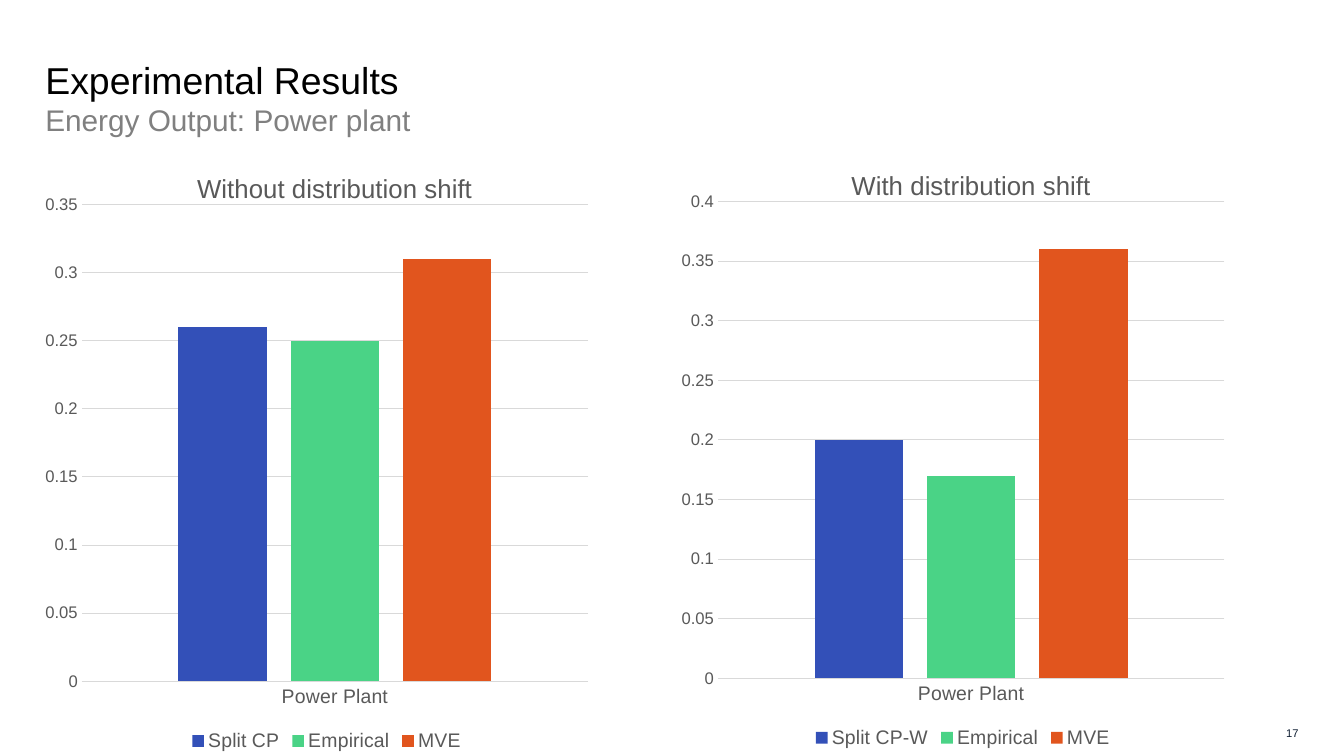
import pptx
import pptx.chart.data
import pptx.dml.color
import pptx.enum.chart
import pptx.enum.text
import pptx.oxml
import pptx.oxml.ns
import pptx.util
from pptx.util import Inches

FONT = "Arial"
COLORS = {
    "title": "000000",
    "subtitle": "808080",
    "number": "0F1E32",
    "label": "595959",
    "grid": "D9D9D9",
}
SERIES_COLORS = ["3350B8", "4AD386", "E1551E"]

HEADING = [("Experimental Results", 26.7, "title"),
           ("Energy Output: Power plant", 21.3, "subtitle")]
PAGE_NUMBER = "17"
CATEGORY = "Power Plant"
CHART_SIZE = (5.52, 6.07)
PLOT_LAYOUT = {"x": 0.055, "y": 0.099, "w": 0.92, "h": 0.779}
CHARTS = [
    {"title": "Without distribution shift", "at": (0.45, 1.43), "title_x": 0.256, "top": 0.35,
     "values": {"Split CP": 0.26, "Empirical": 0.25, "MVE": 0.31}},
    {"title": "With distribution shift", "at": (6.76, 1.4), "title_x": 0.289, "top": 0.4,
     "values": {"Split CP-W": 0.2, "Empirical": 0.17, "MVE": 0.36}},
]


def rgb(value):
    return pptx.dml.color.RGBColor.from_string(value)


def style_font(font, size, color):
    font.name = FONT
    font.size = pptx.util.Pt(size)
    font.bold = False
    font.color.rgb = rgb(COLORS[color])


def style_line(line, color):
    line.color.rgb = rgb(COLORS[color])
    line.width = pptx.util.Pt(0.75)


def add_text_box(page, left, top, width, height):
    box = page.shapes.add_textbox(Inches(left), Inches(top), Inches(width), Inches(height))
    frame = box.text_frame
    frame.word_wrap = True
    frame.margin_left = frame.margin_right = frame.margin_top = frame.margin_bottom = 0
    frame.vertical_anchor = pptx.enum.text.MSO_ANCHOR.MIDDLE
    return frame.paragraphs[0]


def set_layout(parent, after, places, inner=False):
    """Give a chart part a manual layout, in fractions of the chart."""
    for old in parent.findall(pptx.oxml.ns.qn("c:layout")):
        parent.remove(old)
    target = '<c:layoutTarget val="inner"/>' if inner else ""
    modes = "".join(f'<c:{axis}Mode val="edge"/>' for axis in "xy")
    sizes = "".join(f'<c:{key} val="{value}"/>' for key, value in places.items())
    layout = pptx.oxml.parse_xml(
        f'<c:layout {pptx.oxml.ns.nsdecls("c")}><c:manualLayout>'
        f'{target}{modes}{sizes}</c:manualLayout></c:layout>')
    if after is None:
        parent.insert(0, layout)
    else:
        after.addnext(layout)


def add_bar_chart(page, content):
    data = pptx.chart.data.CategoryChartData()
    data.categories = [CATEGORY]
    for name, value in content["values"].items():
        data.add_series(name, [value])
    chart = page.shapes.add_chart(
        pptx.enum.chart.XL_CHART_TYPE.COLUMN_CLUSTERED,
        *map(Inches, content["at"] + CHART_SIZE), data).chart
    style_font(chart.font, 10, "title")

    chart.has_title = True
    para = chart.chart_title.text_frame.paragraphs[0]
    para.text = content["title"]
    style_font(para.font, 18.6, "label")
    chart.chart_title.include_in_layout = False
    title = chart.chart_title._element
    set_layout(title, title.find(pptx.oxml.ns.qn("c:tx")),
               {"x": content["title_x"], "y": 0.037})

    chart.has_legend = True
    chart.legend.position = pptx.enum.chart.XL_LEGEND_POSITION.BOTTOM
    chart.legend.include_in_layout = False
    style_font(chart.legend.font, 14, "label")

    plot = chart.plots[0]
    plot.gap_width = 219
    plot.overlap = -27
    plot.vary_by_categories = False
    for series, color in zip(plot.series, SERIES_COLORS):
        series.format.fill.solid()
        series.format.fill.fore_color.rgb = rgb(color)
    set_layout(chart._chartSpace.chart.plotArea, None, PLOT_LAYOUT, inner=True)

    for axis, size in ((chart.category_axis, 14), (chart.value_axis, 12)):
        axis.major_tick_mark = axis.minor_tick_mark = pptx.enum.chart.XL_TICK_MARK.NONE
        style_font(axis.tick_labels.font, size, "label")
    style_line(chart.category_axis.format.line, "grid")
    scale = chart.value_axis
    scale.minimum_scale, scale.maximum_scale, scale.major_unit = 0, content["top"], 0.05
    scale.format.line.fill.background()
    scale.has_major_gridlines = True
    style_line(scale.major_gridlines.format.line, "grid")
    scale.tick_labels.number_format = "General"
    scale.tick_labels.number_format_is_linked = False


def main():
    deck = pptx.Presentation()
    deck.slide_width, deck.slide_height = Inches(13.33), Inches(7.5)
    page = deck.slides.add_slide(deck.slide_layouts[6])

    para = add_text_box(page, 12.36, 7.14, 0.52, 0.26)
    para.text = PAGE_NUMBER
    para.alignment = pptx.enum.text.PP_ALIGN.RIGHT
    style_font(para.font, 8, "number")

    for content in CHARTS:
        add_bar_chart(page, content)

    para = add_text_box(page, 0.45, 0.52, 9.87, 0.89)
    for index, (text, size, color) in enumerate(HEADING):
        if index:
            para.add_line_break()
        span = para.add_run()
        span.text = text
        style_font(span.font, size, color)

    deck.save("out.pptx")


if __name__ == "__main__":
    main()
